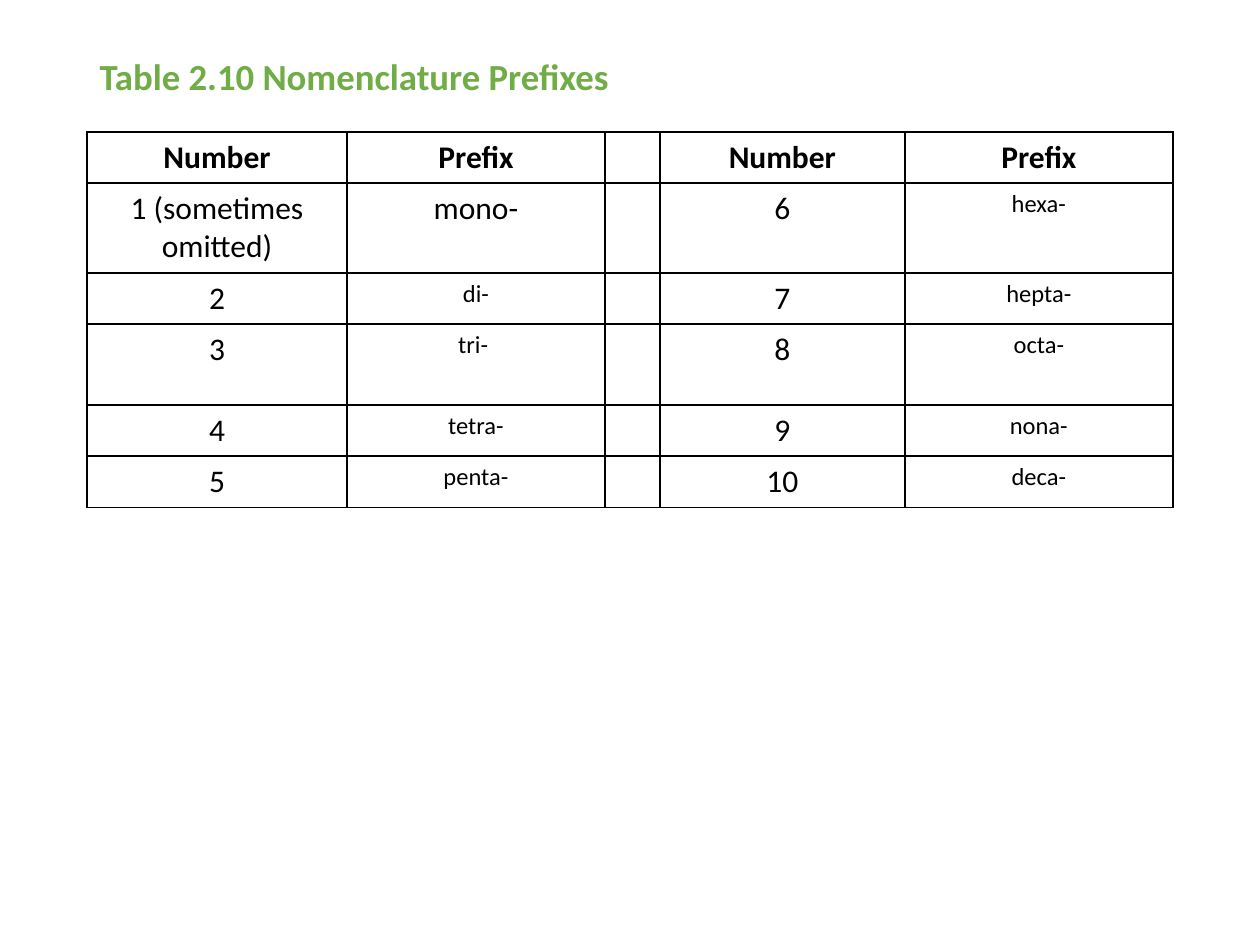
from lxml import etree
from pptx import Presentation
from pptx import util as u
from pptx.dml.color import RGBColor
from pptx.enum import text
from pptx.oxml.ns import qn

PX = 914400 // 126
GREEN = RGBColor(0x70, 0xAD, 0x47)
BLACK = RGBColor(0, 0, 0)
FONT = "Calibri"
LEFT, WIDTH = 87, 1086
COLUMNS = [260, 258, 55, 245, 268]
ROWS = [51, 90, 51, 81, 51, 51]
CONTENT = [
    ["Number", "Prefix", "", "Number", "Prefix"],
    ["1 (sometimes omitted)", "mono-", "", "6", "hexa-"],
    ["2", "di-", "", "7", "hepta-"],
    ["3", "tri- ", "", "8", "octa-"],
    ["4", "tetra-", "", "9", "nona-"],
    ["5", "penta-", "", "10", "deca-"],
]


def add_run(para, words, size, color, bold):
    span = para.add_run()
    span.text = words
    span.font.name = FONT
    span.font.size = u.Pt(size)
    span.font.bold = bold
    span.font.color.rgb = color


def add_borders(cell):
    properties = cell._tc.get_or_add_tcPr()
    for index, side in enumerate(("a:lnL", "a:lnR", "a:lnT", "a:lnB")):
        line = etree.Element(qn(side), w=str(u.Pt(1)))
        fill = etree.SubElement(line, qn("a:solidFill"))
        etree.SubElement(fill, qn("a:srgbClr"), val=str(BLACK))
        properties.insert(index, line)


deck = Presentation()
deck.slide_width, deck.slide_height = u.Inches(10), u.Inches(7.5)
page = deck.slides.add_slide(deck.slide_layouts[5])

# Title
title = page.shapes.title
title.left, title.top = LEFT * PX, 50 * PX
title.width, title.height = WIDTH * PX, 58 * PX
frame = title.text_frame
frame.auto_size = text.MSO_AUTO_SIZE.NONE
frame.vertical_anchor = text.MSO_ANCHOR.MIDDLE
para = frame.paragraphs[0]
para.alignment = text.PP_ALIGN.LEFT
para.line_spacing = 0.9
add_run(para, "Table 2.10 Nomenclature Prefixes", 21, GREEN, True)

# Prefix table
table = page.shapes.add_table(
    len(ROWS), len(COLUMNS), LEFT * PX, 132 * PX, WIDTH * PX, sum(ROWS) * PX
).table
table.horz_banding = False
for column, width in zip(table.columns, COLUMNS):
    column.width = width * PX
for row, height in zip(table.rows, ROWS):
    row.height = height * PX

for r, entries in enumerate(CONTENT):
    for c, words in enumerate(entries):
        cell = table.cell(r, c)
        cell.fill.background()
        add_borders(cell)
        if words:
            para = cell.text_frame.paragraphs[0]
            para.alignment = text.PP_ALIGN.CENTER
            is_prefix = c in (1, 4) and r > 0
            size = 14 if is_prefix and words != "mono-" else 18
            add_run(para, words, size, BLACK, r == 0)

deck.save("out.pptx")
